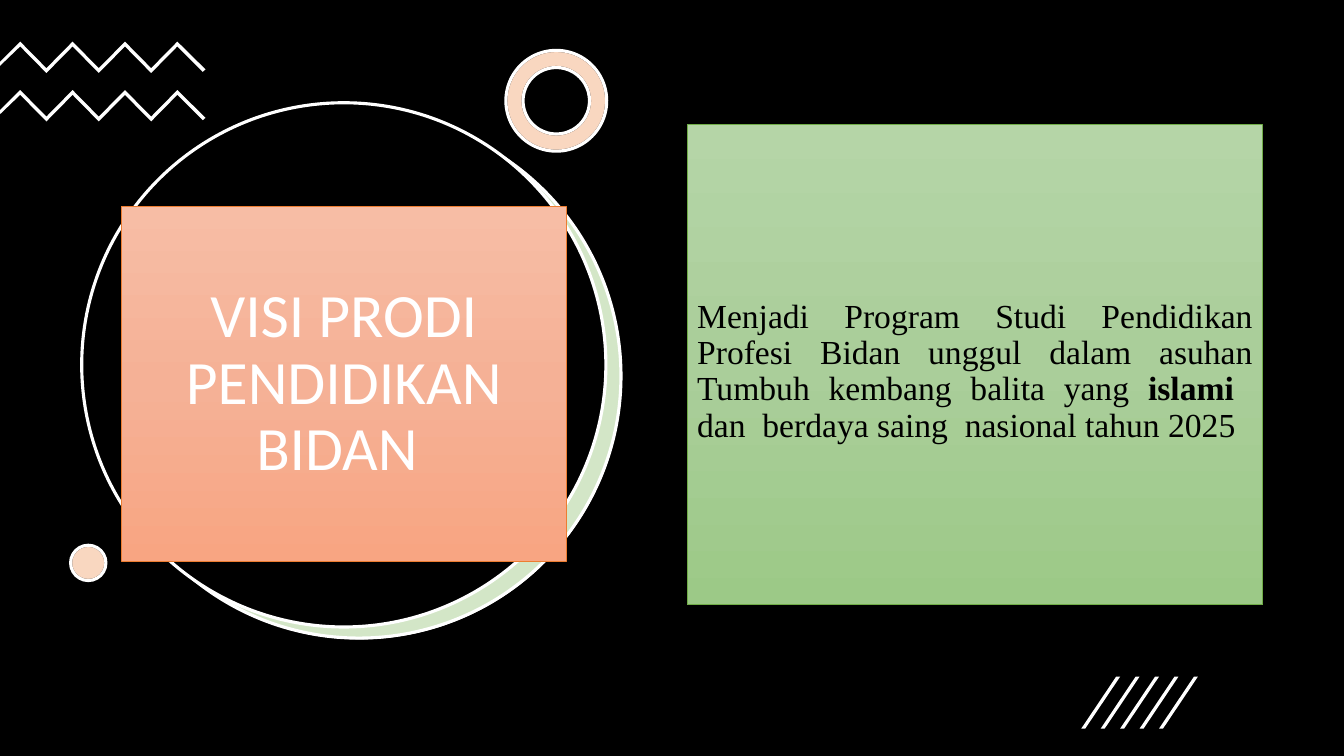
from copy import deepcopy

from lxml.etree import SubElement
from pptx import Presentation
from pptx.dml.color import RGBColor
from pptx.enum.shapes import MSO_SHAPE as Preset
from pptx.enum.text import MSO_ANCHOR as Anchor, PP_ALIGN as Align
from pptx.oxml.ns import qn
from pptx.util import Cm, Pt

BLACK = RGBColor(0x00, 0x00, 0x00)
WHITE = RGBColor(0xFF, 0xFF, 0xFF)
GREEN = RGBColor(0x70, 0xAD, 0x47)
ORANGE = RGBColor(0xED, 0x7D, 0x31)
PEACH_STOPS = [RGBColor(0xF7, 0xBD, 0xA5), RGBColor(0xF5, 0xB1, 0x96), RGBColor(0xF8, 0xA5, 0x82)]
LEAF_STOPS = [RGBColor(0xB5, 0xD5, 0xA7), RGBColor(0xAA, 0xCE, 0x9A), RGBColor(0x9C, 0xC9, 0x87)]

SLIDE_SIZE = (33.87, 19.05)
BIG_CIRCLE = 13.21
RING = (12.75, 1.27, 2.54, 2.54)
DOT = (1.78, 13.74, 0.89, 0.89)
RING_THICKNESS = 0.17

DECORATIONS = [
    (Preset.RECTANGLE, (0, 0, *SLIDE_SIZE), BLACK, None, None),
    (Preset.OVAL, (2.46, 2.9, BIG_CIRCLE, BIG_CIRCLE), WHITE, None, None),
    (Preset.OVAL, (2.44, 2.87, BIG_CIRCLE, BIG_CIRCLE), GREEN, 30, WHITE),
    (Preset.OVAL, (2.06, 2.59, BIG_CIRCLE, BIG_CIRCLE), BLACK, None, WHITE),
    (Preset.DONUT, RING, WHITE, None, BLACK),
    (Preset.DONUT, RING, ORANGE, 30, WHITE),
    (Preset.OVAL, DOT, WHITE, None, BLACK),
    (Preset.OVAL, DOT, ORANGE, 30, WHITE),
]

PANELS = [
    {
        "box": (3.07, 5.21, 11.2, 8.94),
        "stops": PEACH_STOPS,
        "line": ORANGE,
        "frame": {"vertical_anchor": Anchor.MIDDLE},
        "align": Align.CENTER,
        "font": {"name": "Calibri", "size": Pt(44)},
        "color": WHITE,
        "runs": [("VISI PRODI PENDIDIKAN BIDAN ", False)],
    },
    {
        "box": (17.32, 3.14, 14.5, 12.1),
        "stops": LEAF_STOPS,
        "line": GREEN,
        "frame": {"vertical_anchor": Anchor.TOP, "margin_top": Cm(4.4)},
        "align": Align.JUSTIFY,
        "font": {"name": "Times New Roman", "size": Pt(24)},
        "color": BLACK,
        "runs": [
            ("Menjadi Program Studi Pendidikan Profesi Bidan unggul dalam asuhan "
             "Tumbuh kembang balita yang ", False),
            ("islami", True),
            ("  dan  berdaya saing  nasional tahun 2025", False),
        ],
    },
]

ZIGZAG_TOPS = [1.05, 2.27]
ZIGZAG_START, ZIGZAG_STEP, ZIGZAG_DEPTH, ZIGZAG_STROKE = 0.51, 0.66, 0.67, 0.12
SLASH_COUNT, SLASH_LEFT, SLASH_STEP = 5, 27.25, 0.49
SLASH_TOP, SLASH_BOTTOM, SLASH_RUN, SLASH_STROKE = 17.05, 18.36, 0.88, 0.1


def add_preset(slide, preset, box):
    shape = slide.shapes.add_shape(preset, *map(Cm, box))
    shape.shadow.inherit = False
    return shape


def paint(shape, color, opacity=None):
    shape.fill.solid()
    shape.fill.fore_color.rgb = color
    if opacity:
        swatch = shape._element.spPr.find(qn("a:solidFill"))[0]
        SubElement(swatch, qn("a:alpha"), val=str(opacity * 1000))


def outline(shape, color, width):
    if color is None:
        shape.line.fill.background()
    else:
        shape.line.color.rgb = color
        shape.line.width = Pt(width)


def paint_gradient(shape, colors):
    shape.fill.gradient()
    shape.fill.gradient_angle = 270
    stop_list = shape._element.spPr.find(qn("a:gradFill")).find(qn("a:gsLst"))
    stop_list.insert(1, deepcopy(stop_list[0]))
    for index, (stop, color) in enumerate(zip(shape.fill.gradient_stops, colors)):
        stop.color.rgb = color
        stop.position = index / 2


def add_polygon(slide, points):
    start, *others = [(Cm(x), Cm(y)) for x, y in points]
    builder = slide.shapes.build_freeform(*start)
    builder.add_line_segments(others, close=True)
    shape = builder.convert_to_shape()
    shape.shadow.inherit = False
    paint(shape, WHITE)
    outline(shape, None, 0)


def zigzag_points(top):
    upper = [(ZIGZAG_START + ZIGZAG_STEP * i, top + ZIGZAG_DEPTH * (i % 2)) for i in range(7)]
    lower = [(x, y + ZIGZAG_STROKE) for x, y in reversed(upper)]
    right_end = [(5.18, top + 0.7), (5.11, top + 0.76)]
    left_end = [(0, top + 0.61), (0, top + 0.51)]
    return upper + right_end + lower + left_end


def slash_points(left):
    return [
        (left + SLASH_STROKE, SLASH_BOTTOM),
        (left, SLASH_BOTTOM),
        (left + SLASH_RUN, SLASH_TOP),
        (left + SLASH_RUN + SLASH_STROKE, SLASH_TOP),
    ]


def add_panel(slide, panel):
    shape = add_preset(slide, Preset.RECTANGLE, panel["box"])
    paint_gradient(shape, panel["stops"])
    outline(shape, panel["line"], 0.5)
    frame = shape.text_frame
    frame.word_wrap = True
    for name, value in panel["frame"].items():
        setattr(frame, name, value)
    paragraph = frame.paragraphs[0]
    paragraph.alignment = panel["align"]
    paragraph.line_spacing = 0.9
    for text, bold in panel["runs"]:
        run = paragraph.add_run()
        run.text = text
        for name, value in {**panel["font"], "bold": bold}.items():
            setattr(run.font, name, value)
        run.font.color.rgb = panel["color"]


def main():
    presentation = Presentation()
    presentation.slide_width, presentation.slide_height = map(Cm, SLIDE_SIZE)
    slide = presentation.slides.add_slide(presentation.slide_layouts[6])
    for preset, box, color, opacity, line in DECORATIONS:
        shape = add_preset(slide, preset, box)
        paint(shape, color, opacity)
        outline(shape, line, 2.25)
        if preset == Preset.DONUT:
            shape.adjustments[0] = RING_THICKNESS
    for panel in PANELS:
        add_panel(slide, panel)
    for top in ZIGZAG_TOPS:
        add_polygon(slide, zigzag_points(top))
    for index in range(SLASH_COUNT):
        add_polygon(slide, slash_points(SLASH_LEFT + SLASH_STEP * index))
    presentation.save("out.pptx")


if __name__ == "__main__":
    main()
